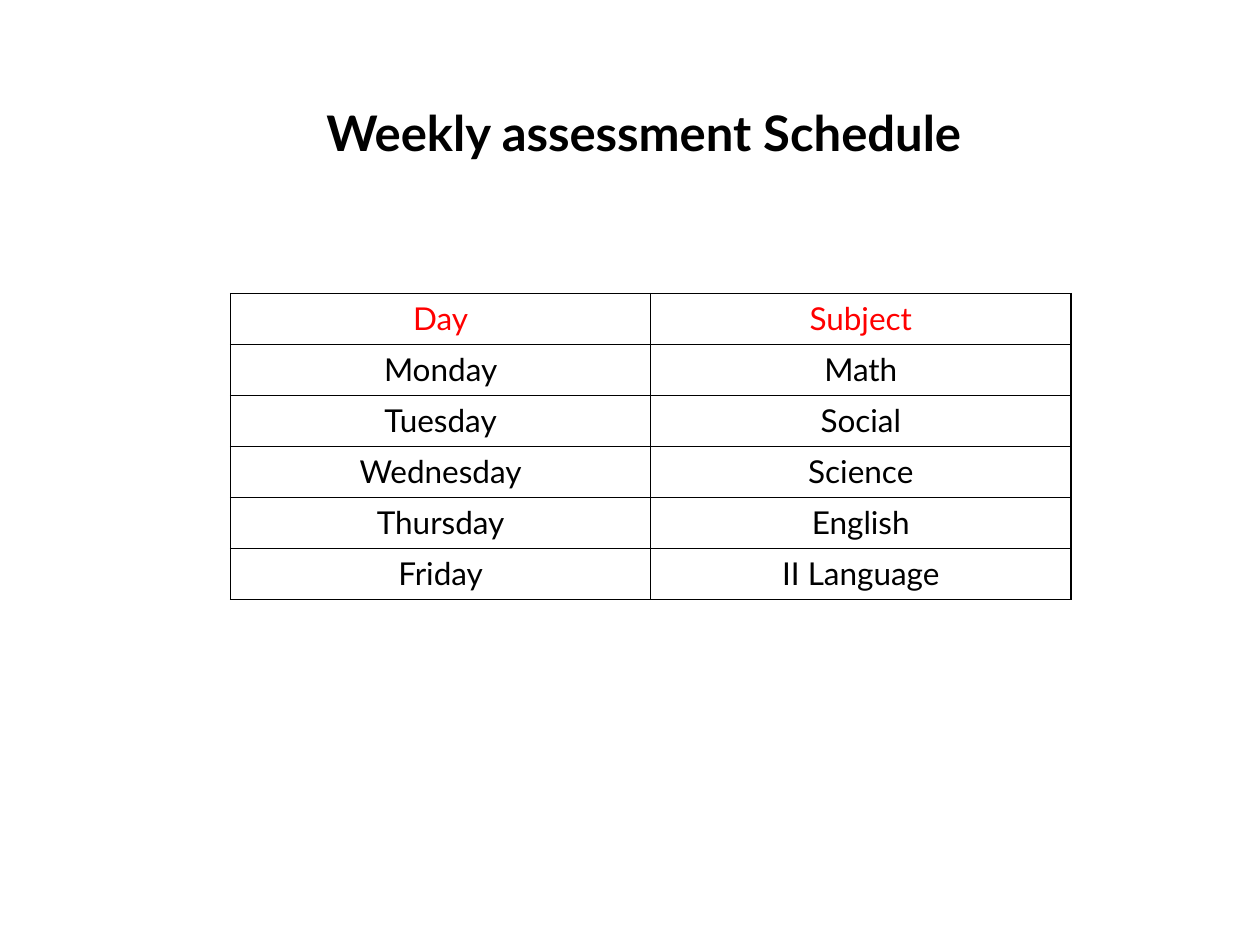
"""Build the weekly assessment schedule slide."""
from lxml import etree
from pptx import Presentation
from pptx import util as u
from pptx.dml.color import RGBColor
from pptx.enum import text
from pptx.oxml.ns import qn

TITLE = "Weekly assessment Schedule "
ROWS = [
    ("Day", "Subject"),
    ("Monday", "Math"),
    ("Tuesday", "Social"),
    ("Wednesday", "Science"),
    ("Thursday", "English"),
    ("Friday", "II Language"),
]
COLORS = {"ink": "000000", "head": "FF0000"}
FONT = "Lato"
COL_W, ROW_H = 3.335, 0.405


def style(frame, size, color, bold=False):
    para = frame.paragraphs[0]
    para.alignment = text.PP_ALIGN.CENTER
    for run in para.runs:
        font = run.font
        font.name, font.size, font.bold = FONT, u.Pt(size), bold
        font.color.rgb = RGBColor.from_string(COLORS[color])


def border(cell):
    props = cell._tc.get_or_add_tcPr()
    for side in ("lnL", "lnR", "lnT", "lnB"):
        line = etree.SubElement(props, qn("a:" + side), w=str(u.Pt(1)))
        fill = etree.SubElement(line, qn("a:solidFill"))
        etree.SubElement(fill, qn("a:srgbClr"), val=COLORS["ink"])


def add_title(slide):
    title = slide.shapes.title
    title.left, title.top = u.Inches(1.53), u.Inches(0.76)
    title.width, title.height = u.Inches(7.25), u.Inches(0.57)
    frame = title.text_frame
    frame.text = TITLE
    frame.word_wrap = True
    frame.auto_size = text.MSO_AUTO_SIZE.SHAPE_TO_FIT_TEXT
    frame.vertical_anchor = text.MSO_ANCHOR.TOP
    style(frame, 28, "ink", True)


def add_schedule(slide):
    count, width = len(ROWS), len(ROWS[0])
    table = slide.shapes.add_table(
        count, width, u.Inches(1.83), u.Inches(2.33),
        u.Inches(COL_W * width), u.Inches(ROW_H * count)).table
    table.horz_banding = False
    for r, row in enumerate(ROWS):
        for c, word in enumerate(row):
            cell = table.cell(r, c)
            cell.text_frame.text = word
            style(cell.text_frame, 18, "ink" if r else "head")
            border(cell)
            cell.fill.background()


def main():
    deck = Presentation()
    deck.slide_width, deck.slide_height = u.Inches(10), u.Inches(7.5)
    slide = deck.slides.add_slide(deck.slide_layouts[5])
    add_title(slide)
    add_schedule(slide)
    deck.save("out.pptx")


if __name__ == "__main__":
    main()
